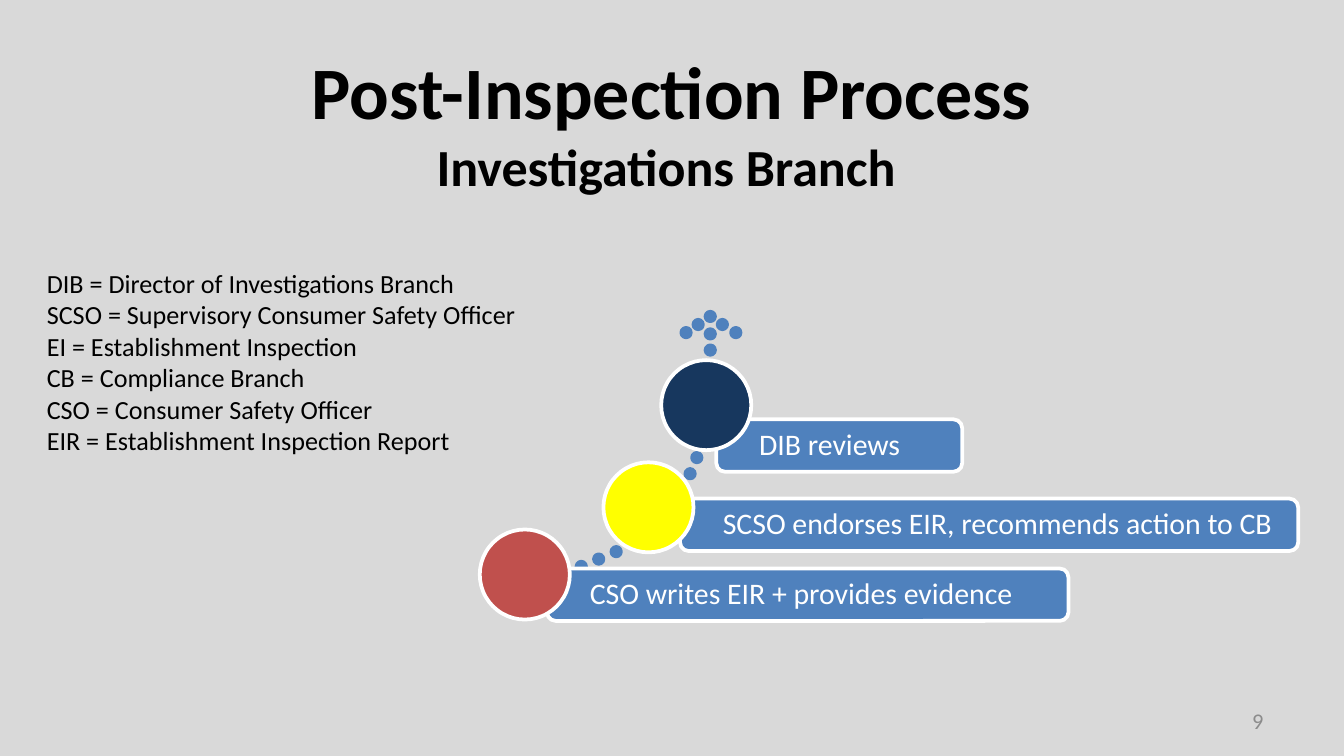
from typing import Any, NamedTuple

from pptx import Presentation
from pptx.dml.color import RGBColor
from pptx.enum.shapes import MSO_SHAPE
from pptx.enum.text import MSO_ANCHOR, MSO_AUTO_SIZE, PP_ALIGN
from pptx.util import Inches, Pt

OVAL, ROUNDED = MSO_SHAPE.OVAL, MSO_SHAPE.ROUNDED_RECTANGLE
TOP, MIDDLE = MSO_ANCHOR.TOP, MSO_ANCHOR.MIDDLE
LEFT, CENTER, RIGHT, JUSTIFY = PP_ALIGN.LEFT, PP_ALIGN.CENTER, PP_ALIGN.RIGHT, PP_ALIGN.JUSTIFY
NO_FIT = MSO_AUTO_SIZE.NONE

BLACK = RGBColor(0, 0, 0)
WHITE = RGBColor(255, 255, 255)
GRAY = RGBColor(0x8C, 0x8C, 0x8C)
BACKGROUND = RGBColor(0xD9, 0xD9, 0xD9)
BLUE = RGBColor(0x4F, 0x81, 0xBD)
RED = RGBColor(0xC0, 0x50, 0x4D)
YELLOW = RGBColor(255, 255, 0)
NAVY = RGBColor(0x17, 0x37, 0x5E)

COLUMNS, ROWS = 100, 56.25
CELL = Inches(10) / COLUMNS
DOT, CIRCLE, BAR_HEIGHT = 0.7, 6.7, 3.9


class Area(NamedTuple):
    left: float
    top: float
    width: float
    height: float


class Trail(NamedTuple):
    left: float
    top: float
    column_step: float
    row_step: float
    count: int


class Step(NamedTuple):
    text: str
    color: RGBColor
    circle_left: float
    circle_top: float
    bar_left: float
    bar_top: float
    bar_width: float


TRAILS = [
    Trail(45.5, 40.7, -1.3, 0.55, 3),
    Trail(51.5, 33.7, -0.5, 1.2, 2),
    Trail(52.5, 23.2, -0.9, 0.6, 3),
    Trail(53.4, 23.8, 1, 0.6, 2),
    Trail(52.5, 24.5, 0, 1.2, 2),
]
STEPS = [
    Step("CSO writes EIR + provides evidence", RED, 35.7, 39.4, 40.7, 42.3, 38.8),
    Step("SCSO endorses EIR, recommends action to CB", YELLOW, 44.9, 34.4, 50.6, 37.1, 46),
    Step("DIB reviews", NAVY, 49.2, 26.8, 53.3, 31.2, 18.3),
]
ABBREVIATIONS = [
    "DIB = Director of Investigations Branch",
    "SCSO = Supervisory Consumer Safety Officer",
    "EI = Establishment Inspection",
    "CB = Compliance Branch",
    "CSO = Consumer Safety Officer",
    "EIR = Establishment Inspection Report",
]


def cells(area: Area) -> list[int]:
    return [round(CELL * length) for length in area]


def apply(target: Any, values: dict[str, Any]) -> None:
    for name, value in values.items():
        setattr(target, name, value)


def format_font(font: Any, size: float, color: RGBColor, bold: bool = False) -> None:
    apply(font, {"name": "Calibri", "size": Pt(size), "bold": bold})
    font.color.rgb = color


def write(shape: Any, lines: list[str], size: float, color: RGBColor,
          alignment: Any, anchor: Any) -> None:
    frame = shape.text_frame
    apply(frame, {"word_wrap": True, "vertical_anchor": anchor, "text": "\n".join(lines)})
    for paragraph in frame.paragraphs:
        paragraph.alignment = alignment
        for run in paragraph.runs:
            format_font(run.font, size, color)


def draw_shape(slide: Any, kind: Any, area: Area, fill: RGBColor, line: RGBColor) -> Any:
    shape = slide.shapes.add_shape(kind, *cells(area))
    shape.shadow.inherit = False
    shape.fill.solid()
    shape.fill.fore_color.rgb = fill
    shape.line.color.rgb = line
    shape.line.width = Pt(2)
    return shape


def draw_title(slide: Any) -> None:
    title = slide.shapes.title
    apply(title, dict(zip(("left", "top", "width", "height"), cells(Area(0, 3.8, COLUMNS, 10.5)))))
    apply(title.text_frame, {"auto_size": NO_FIT, "vertical_anchor": MIDDLE, "word_wrap": True})
    paragraph = title.text_frame.paragraphs[0]
    paragraph.alignment = CENTER
    heading = paragraph.add_run()
    heading.text = "Post-Inspection Process"
    format_font(heading.font, 39.6, BLACK, True)
    paragraph.add_line_break()
    subheading = paragraph.add_run()
    subheading.text = "Investigations Branch "
    format_font(subheading.font, 27.9, BLACK, True)


def draw_trail(slide: Any, trail: Trail) -> None:
    for index in range(trail.count):
        left = trail.left + index * trail.column_step
        top = trail.top + index * trail.row_step
        draw_shape(slide, OVAL, Area(left, top, DOT, DOT), BLUE, BLUE)


def draw_step(slide: Any, step: Step) -> None:
    area = Area(step.bar_left, step.bar_top, step.bar_width, BAR_HEIGHT)
    bar = draw_shape(slide, ROUNDED, area, BLUE, WHITE)
    write(bar, [step.text], 16, WHITE, LEFT, MIDDLE)
    apply(bar.text_frame, {
        "margin_left": Inches(0.3), "margin_right": Inches(0.07),
        "margin_top": Inches(0.07), "margin_bottom": Inches(0.07),
    })
    bar.text_frame.paragraphs[0].line_spacing = 0.9
    circle = Area(step.circle_left, step.circle_top, CIRCLE, CIRCLE)
    draw_shape(slide, OVAL, circle, step.color, WHITE)


def main() -> None:
    presentation = Presentation()
    presentation.slide_width = round(CELL * COLUMNS)
    presentation.slide_height = round(CELL * ROWS)
    slide = presentation.slides.add_slide(presentation.slide_layouts[5])
    slide.background.fill.solid()
    slide.background.fill.fore_color.rgb = BACKGROUND

    draw_title(slide)
    page_number = slide.shapes.add_textbox(*cells(Area(71.7, 52.1, 23.3, 3)))
    write(page_number, ["9"], 12, GRAY, RIGHT, MIDDLE)
    for trail in TRAILS:
        draw_trail(slide, trail)
    for step in STEPS:
        draw_step(slide, step)
    legend = slide.shapes.add_textbox(*cells(Area(2.5, 19.4, 37.7, 15.1)))
    write(legend, ABBREVIATIONS, 14, BLACK, JUSTIFY, TOP)

    presentation.save("out.pptx")


if __name__ == "__main__":
    main()
